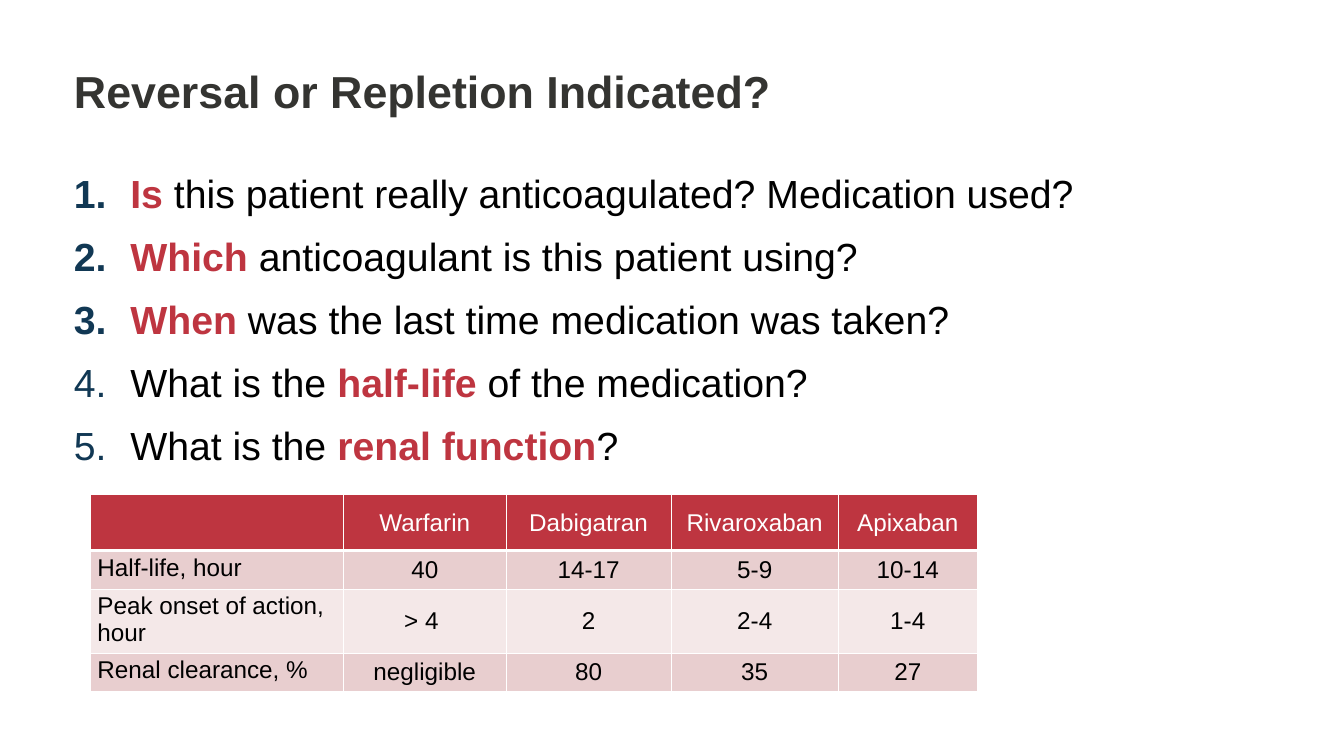
from lxml.etree import SubElement
from pptx import Presentation
from pptx.dml.color import RGBColor
from pptx.enum.text import MSO_ANCHOR, MSO_AUTO_SIZE, PP_ALIGN
from pptx.oxml.ns import qn
from pptx.util import Pt

COLORS = {
    "title": "343431",
    "number": "113854",
    "accent": "BE3540",
    "text": "000000",
    "white": "FFFFFF",
    "band_dark": "E8CECF",
    "band_light": "F4E8E8",
}
FONT = "Arial"

QUESTIONS = [
    [("Is", True), (" this patient really anticoagulated? Medication used?", False)],
    [("Which", True), (" anticoagulant is this patient using?", False)],
    [("When", True), (" was the last time medication was taken?", False)],
    [("What is the ", False), ("half-life", True), (" of the medication?", False)],
    [("What is the ", False), ("renal function", True), ("?", False)],
]
DRUG_TABLE = [
    ["", "Warfarin", "Dabigatran", "Rivaroxaban", "Apixaban"],
    ["Half-life, hour", "40", "14-17", "5-9", "10-14"],
    ["Peak onset of action, hour", "> 4 ", "2", "2-4", "1-4"],
    ["Renal clearance, %", "negligible", "80", "35", "27"],
]
COL_WIDTHS = [271, 174, 177, 179, 149]
ROW_HEIGHTS = [60, 41, 69, 41]


def set_attrs(obj, values):
    for name, value in values.items():
        setattr(obj, name, value)


def format_font(font, size, color, bold=False):
    set_attrs(font, {"name": FONT, "size": Pt(size), "bold": bold})
    font.color.rgb = RGBColor.from_string(COLORS[color])


def place(sp, left, top, width, height, anchor):
    set_attrs(sp, {"left": Pt(left), "top": Pt(top),
                   "width": Pt(width), "height": Pt(height)})
    set_attrs(sp.text_frame, {
        "word_wrap": True, "auto_size": MSO_AUTO_SIZE.NONE,
        "vertical_anchor": anchor,
        "margin_left": Pt(7.2), "margin_right": Pt(7.2),
        "margin_top": Pt(7.2), "margin_bottom": Pt(0),
    })


def add_title(s, text):
    sp = s.shapes.title
    place(sp, 72, 24, 1268.64, 139.68, MSO_ANCHOR.MIDDLE)
    p = sp.text_frame.paragraphs[0]
    p.alignment = PP_ALIGN.LEFT
    r = p.add_run()
    r.text = text
    format_font(r.font, 48, "title", True)


def number_paragraph(p):
    pPr = p._p.get_or_add_pPr()
    pPr.set("marL", str(Pt(60.5)))
    pPr.set("indent", str(Pt(-60.5)))
    color = SubElement(pPr, qn("a:buClr"))
    SubElement(color, qn("a:srgbClr"), val=COLORS["number"])
    SubElement(pPr, qn("a:buFont"), typeface=FONT)
    SubElement(pPr, qn("a:buAutoNum"), type="arabicPeriod")


def add_questions(s, questions):
    sp = s.placeholders[1]
    place(sp, 72, 174.24, 1268.64, 558, MSO_ANCHOR.TOP)
    tf = sp.text_frame
    for i, parts in enumerate(questions):
        p = tf.add_paragraph() if i else tf.paragraphs[0]
        number_paragraph(p)
        set_attrs(p, {"alignment": PP_ALIGN.LEFT,
                      "space_before": Pt(17 if i else 0), "space_after": Pt(0)})
        for text, key in parts:
            r = p.add_run()
            r.text = text
            format_font(r.font, 42, "accent" if key else "text", key)


def add_borders(cell, bottom):
    tcPr = cell._tc.get_or_add_tcPr()
    for side, width in (("L", 1), ("R", 1), ("T", 1), ("B", bottom)):
        ln = SubElement(tcPr, qn(f"a:ln{side}"), w=str(Pt(width)))
        fill = SubElement(ln, qn("a:solidFill"))
        SubElement(fill, qn("a:srgbClr"), val=COLORS["white"])


def format_cell(cell, text, row, col):
    header = row == 0
    add_borders(cell, 3 if header else 1)
    fill = "accent" if header else "band_dark" if row % 2 else "band_light"
    cell.fill.solid()
    cell.fill.fore_color.rgb = RGBColor.from_string(COLORS[fill])
    set_attrs(cell, {
        "margin_left": Pt(7.2), "margin_right": Pt(7.2),
        "margin_top": Pt(4), "margin_bottom": Pt(4),
        "vertical_anchor": MSO_ANCHOR.MIDDLE if col else MSO_ANCHOR.TOP,
    })
    p = cell.text_frame.paragraphs[0]
    p.alignment = PP_ALIGN.CENTER if col else PP_ALIGN.LEFT
    if text:
        r = p.add_run()
        r.text = text
        format_font(r.font, 26, "white" if header else "text")


def add_drug_table(s, rows):
    frame = s.shapes.add_table(len(rows), len(rows[0]), Pt(97.2), Pt(530),
                               Pt(sum(COL_WIDTHS)), Pt(sum(ROW_HEIGHTS)))
    table = frame.table
    for column, width in zip(table.columns, COL_WIDTHS):
        column.width = Pt(width)
    for row, height in zip(table.rows, ROW_HEIGHTS):
        row.height = Pt(height)
    for i, values in enumerate(rows):
        for j, text in enumerate(values):
            format_cell(table.cell(i, j), text, i, j)


def main():
    prs = Presentation()
    set_attrs(prs, {"slide_width": Pt(1440), "slide_height": Pt(810)})
    s = prs.slides.add_slide(prs.slide_layouts[1])
    add_title(s, "Reversal or Repletion Indicated?")
    add_questions(s, QUESTIONS)
    add_drug_table(s, DRUG_TABLE)
    prs.save("out.pptx")


if __name__ == "__main__":
    main()
